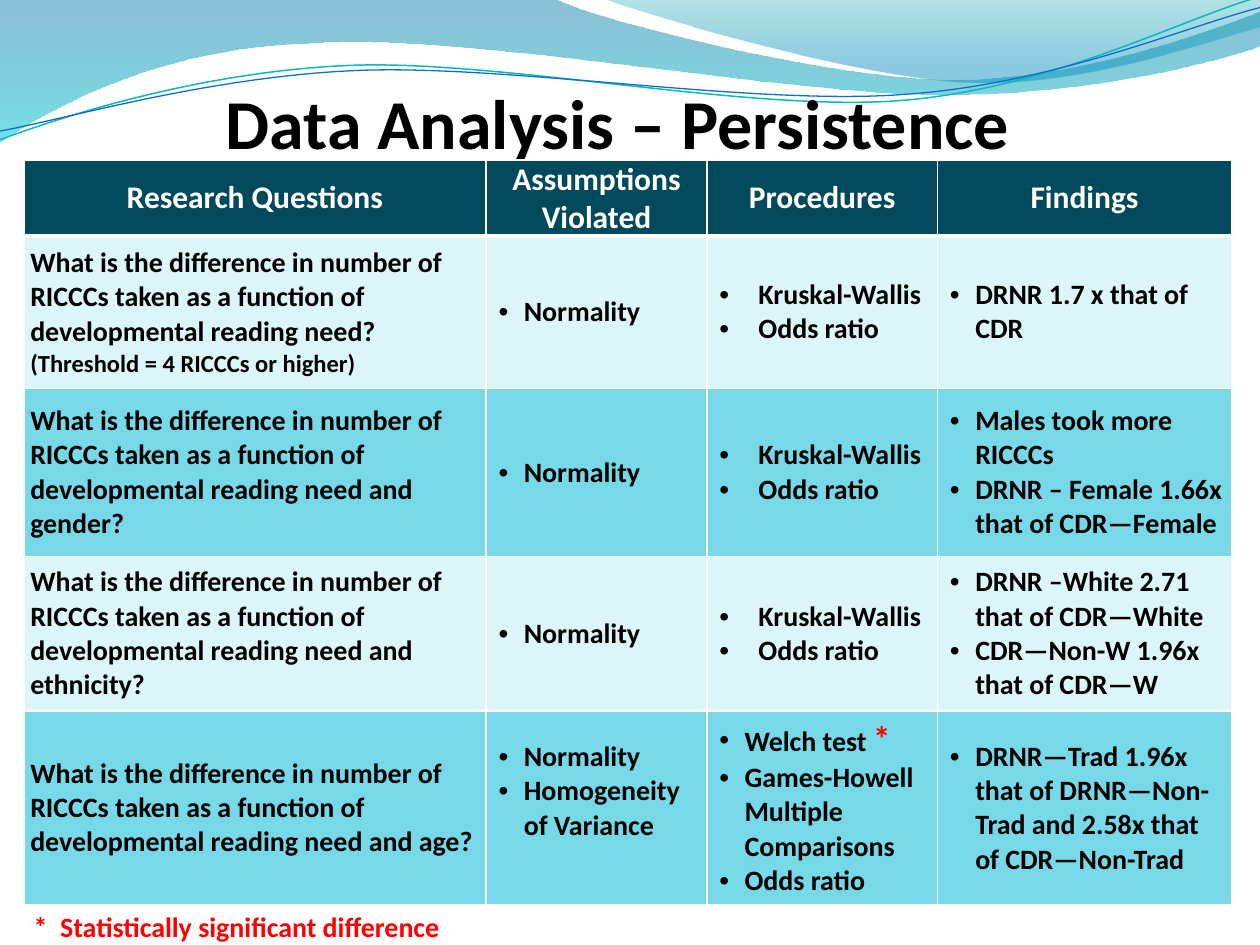
import pptx
import pptx.util
import pptx.dml.color
import pptx.enum.text
import pptx.oxml
import pptx.oxml.ns
from lxml import etree

Cm, Pt = pptx.util.Cm, pptx.util.Pt
RGB = pptx.dml.color.RGBColor.from_string
ALIGN, ANCHOR = pptx.enum.text.PP_ALIGN, pptx.enum.text.MSO_ANCHOR
qn = pptx.oxml.ns.qn

THEME = {
    "font": "Calibri",
    "header_fill": "03495C",
    "bands": ("DBF5F9", "77D9E8"),
    "border": "FFFFFF",
    "styles": {
        "title": (40, "000000"),
        "header": (18, "FFFFFF"),
        "body": (16, "000000"),
        "small": (14, "000000"),
        "star": (20, "FF0000"),
        "note": (16, "FF0000"),
    },
}

TITLE = "Data Analysis – Persistence "
NOTE = "*  Statistically significant difference"
HEADERS = ["Research Questions", "Assumptions Violated", "Procedures", "Findings"]
QUESTION = "What is the difference in number of RICCCs taken as a function of developmental reading need"
RANK_TESTS = ["Kruskal-Wallis", "Odds ratio"]
ROWS = [
    [[QUESTION + "?", [("(Threshold = 4 RICCCs or higher)", "small")]],
     ["Normality"], RANK_TESTS, ["DRNR 1.7 x that of CDR"]],
    [[QUESTION + " and gender?"], ["Normality"], RANK_TESTS,
     ["Males took more RICCCs", "DRNR – Female 1.66x that of CDR—Female"]],
    [[QUESTION + " and ethnicity?"], ["Normality"], RANK_TESTS,
     ["DRNR –White 2.71 that of CDR—White", "CDR—Non-W 1.96x that of CDR—W"]],
    [[QUESTION + " and age?"], ["Normality", "Homogeneity of Variance"],
     [[("Welch test ", "body"), ("*", "star")],
      "Games-Howell Multiple Comparisons", "Odds ratio"],
     ["DRNR—Trad 1.96x that of DRNR—Non-Trad and 2.58x that of CDR—Non-Trad"]],
]
COL_WIDTHS = [9.32, 4.45, 4.65, 5.93]
ROW_HEIGHTS = [1.24, 3.08, 3.38, 3.12, 3.91]
TABLE_HEIGHT = 15.04
NARROW, WIDE = (0.63, -0.51), (0.91, -0.79)
RAISED_CELL, RAISE = (4, 1), 0.68

WAVES = [
    {"points": [(0, 0), (4.4, -0.01), (4.76, 0.17, 6.64, 0.63, 7.58, 0.63),
                (8.53, 0.63, 9.58, 0.26, 10, 0.09), (10.01, 0.36),
                (9.83, 0.44, 8.7, 0.76, 7.46, 0.75),
                (6.22, 0.75, 3.82, 0.28, 2.57, 0.34),
                (1.29, 0.36, 0.46, 0.83, -0.01, 1.13)],
     "stops": [(0, "0074A1", 45), (1, "00C6CF", 55)]},
    {"points": [(4.79, -0.01), (5.09, 0.11, 6.82, 0.62, 7.69, 0.65),
                (8.56, 0.69, 9.61, 0.32, 10, 0.21), (10, 0)],
     "stops": [(0, "00A1A9", 30), (0.8, "008BBF", 45)]},
    {"points": [(0, 1.11), (0.48, 0.93, 1.58, 0.57, 2.77, 0.52),
                (3.95, 0.47, 5.93, 0.89, 7.13, 0.8),
                (8.33, 0.71, 9.38, 0.15, 9.98, -0.02)],
     "line": ("0AB8BF", 0.85)},
    {"points": [(0, 1.04), (0.47, 0.96, 1.64, 0.61, 2.83, 0.56),
                (4.03, 0.51, 5.97, 0.84, 7.17, 0.75),
                (8.36, 0.67, 9.41, 0.21, 10, 0.06)],
     "line": ("0F6FC6", 0.75)},
]


def build_curve(s, points, closed):
    segments = [[Cm(v * 2.54) for v in seg] for seg in points]
    ends = [seg[-2:] for seg in segments]
    builder = s.shapes.build_freeform(*ends[0], scale=1.0)
    builder.add_line_segments(ends[1:], close=closed)
    sp = builder.convert_to_shape()
    left, top = (min(axis) for axis in zip(*ends))
    lines = list(sp._element.iter(qn("a:lnTo")))
    for line, seg in zip(lines, segments[1:]):
        if len(seg) == 6:
            curve = etree.Element(qn("a:cubicBezTo"))
            for x, y in zip(seg[::2], seg[1::2]):
                etree.SubElement(curve, qn("a:pt"), x=str(x - left), y=str(y - top))
            line.getparent().replace(line, curve)
    return sp


def add_wave(s, wave):
    sp = build_curve(s, wave["points"], "stops" in wave)
    sp.shadow.inherit = False
    if "line" in wave:
        color, width = wave["line"]
        sp.fill.background()
        sp.line.color.rgb, sp.line.width = RGB(color), Pt(width)
        return
    sp.line.fill.background()
    sp.fill.gradient()
    sp.fill.gradient_angle = 270
    for stop, (position, color, _) in zip(sp.fill.gradient_stops, wave["stops"]):
        stop.position, stop.color.rgb = position, RGB(color)
    for clr, (_, _, opacity) in zip(sp._element.iter(qn("a:srgbClr")), wave["stops"]):
        etree.SubElement(clr, qn("a:alpha"), val=str(opacity * 1000))


def write(tf, paragraphs, style, align=ALIGN.LEFT, bullet=None):
    tf.word_wrap = True
    for i, runs in enumerate(paragraphs):
        p = tf.add_paragraph() if i else tf.paragraphs[0]
        p.alignment = align
        for text, name in [(runs, style)] if isinstance(runs, str) else runs:
            r = p.add_run()
            r.text = text
            size, color = THEME["styles"][name]
            r.font.name, r.font.size, r.font.bold = THEME["font"], Pt(size), True
            r.font.color.rgb = RGB(color)
        if bullet:
            pPr = p._p.get_or_add_pPr()
            pPr.set("marL", str(Cm(bullet[0])))
            pPr.set("indent", str(Cm(bullet[1])))
            etree.SubElement(pPr, qn("a:buFont"), typeface="Arial")
            etree.SubElement(pPr, qn("a:buChar"), char="•")


def add_text(s, box, text, style, align, anchor):
    tf = s.shapes.add_textbox(*map(Cm, box)).text_frame
    tf.vertical_anchor = anchor
    write(tf, [text], style, align)


def set_borders(cell, top, bottom):
    tcPr = cell._tc.get_or_add_tcPr()
    widths = {"a:lnL": 1, "a:lnR": 1, "a:lnT": top, "a:lnB": bottom}
    for i, (tag, width) in enumerate(widths.items()):
        ln = etree.Element(qn(tag), w=str(Pt(width)))
        fill = etree.SubElement(ln, qn("a:solidFill"))
        etree.SubElement(fill, qn("a:srgbClr"), val=THEME["border"])
        tcPr.insert(i, ln)


def add_findings_table(s):
    frame = s.shapes.add_table(len(ROW_HEIGHTS), len(COL_WIDTHS), Cm(0.48), Cm(3.23),
                               Cm(sum(COL_WIDTHS)), Cm(TABLE_HEIGHT))
    table = frame.table
    for col, width in zip(table.columns, COL_WIDTHS):
        col.width = Cm(width)
    for row, height in zip(table.rows, ROW_HEIGHTS):
        row.height = Cm(height)
    frame.height = Cm(TABLE_HEIGHT)
    for i, contents in enumerate([[[h] for h in HEADERS]] + ROWS):
        for j, paragraphs in enumerate(contents):
            cell = table.cell(i, j)
            cell.vertical_anchor = ANCHOR.MIDDLE
            cell.margin_left = cell.margin_right = Cm(0.13)
            cell.margin_top = Cm(0)
            cell.margin_bottom = Cm(RAISE if (i, j) == RAISED_CELL else 0)
            cell.fill.solid()
            cell.fill.fore_color.rgb = RGB(THEME["bands"][(i - 1) % 2] if i else THEME["header_fill"])
            set_borders(cell, 3 if i == 1 else 1, 1 if i else 3)
            if i == 0:
                write(cell.text_frame, paragraphs, "header", ALIGN.CENTER)
            else:
                bullet = WIDE if paragraphs is RANK_TESTS else NARROW
                write(cell.text_frame, paragraphs, "body", bullet=bullet if j else None)


def main():
    prs = pptx.Presentation()
    prs.slide_width, prs.slide_height = Cm(25.4), Cm(19.05)
    s = prs.slides.add_slide(prs.slide_layouts[6])
    for wave in WAVES:
        add_wave(s, wave)
    add_text(s, (0.43, 1.27, 24.36, 2.34), TITLE, "title", ALIGN.CENTER, ANCHOR.MIDDLE)
    add_findings_table(s)
    add_text(s, (0.43, 18.21, 11.43, 0.94), NOTE, "note", ALIGN.LEFT, ANCHOR.TOP)
    prs.save("out.pptx")


if __name__ == "__main__":
    main()
